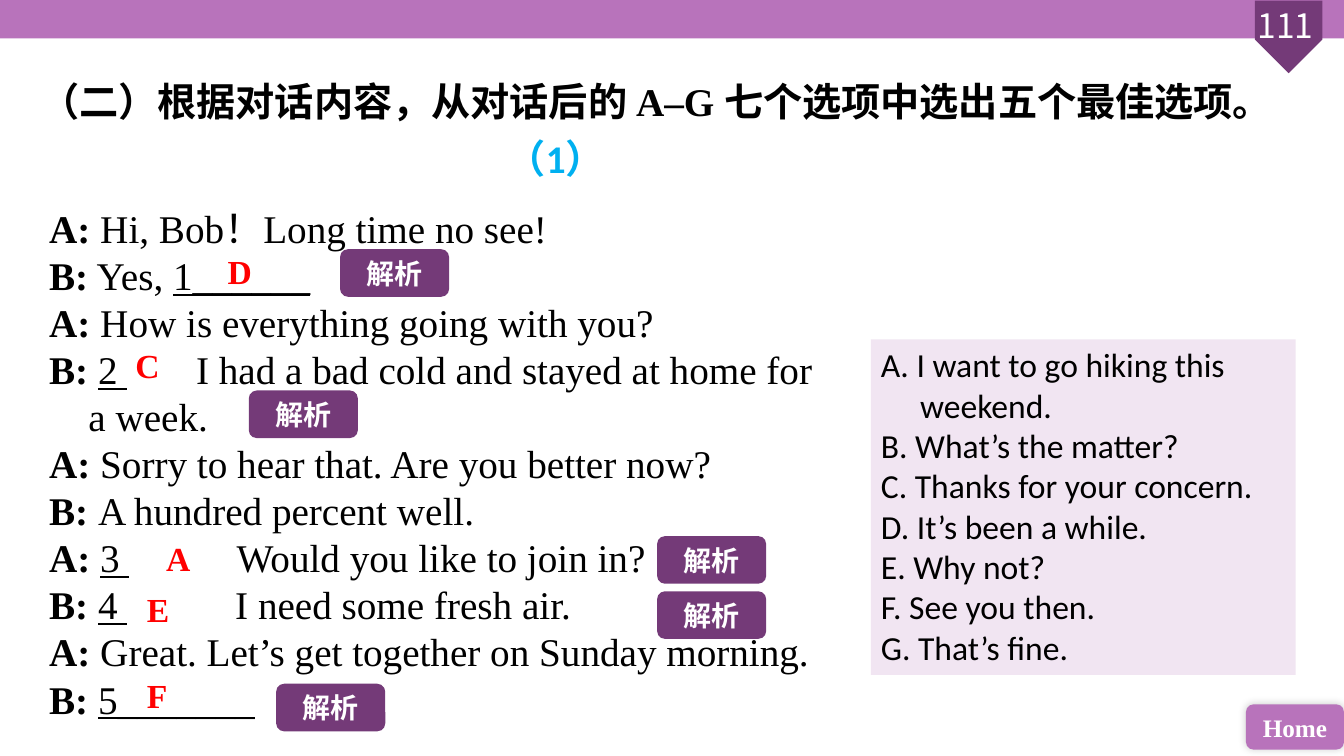
from lxml import etree
from pptx import Presentation
from pptx.dml.color import RGBColor
from pptx.enum.shapes import MSO_SHAPE
from pptx.enum.text import MSO_ANCHOR, PP_ALIGN
from pptx.oxml.ns import qn
from pptx.util import Cm, Pt

RECTANGLE = MSO_SHAPE.RECTANGLE
ROUNDED = MSO_SHAPE.ROUNDED_RECTANGLE
PENTAGON = MSO_SHAPE.PENTAGON
TOP, MIDDLE = MSO_ANCHOR.TOP, MSO_ANCHOR.MIDDLE
LEFT, CENTER = PP_ALIGN.LEFT, PP_ALIGN.CENTER

ORCHID = RGBColor(0xB8, 0x73, 0xBB)
PLUM = RGBColor(0x74, 0x3A, 0x78)
PALE = RGBColor(0xF1, 0xE5, 0xF2)
WHITE = RGBColor(0xFF, 0xFF, 0xFF)
BLACK = RGBColor(0, 0, 0)
RED = RGBColor(0xFF, 0, 0)
BLUE = RGBColor(0, 0xB0, 0xF0)

SERIF, SANS, CHINESE = "Times New Roman", "Calibri", "Noto Sans CJK SC"
HANGING = 0.99

TITLE_FORMAT = {"name": SERIF, "size": Pt(28), "bold": True, "color": BLACK}
NUMBER_FORMAT = {"name": SANS, "size": Pt(28), "bold": True, "color": BLUE}
PAGE_FORMAT = {"name": CHINESE, "size": Pt(24), "color": WHITE}
HOME_FORMAT = {"name": SERIF, "size": Pt(18), "bold": True, "color": WHITE}
BUTTON_FORMAT = {"name": SANS, "size": Pt(20), "bold": True, "color": WHITE}
ANSWER_FORMAT = {"name": SERIF, "size": Pt(24), "bold": True, "color": RED}
OPTION_FORMAT = {"name": SANS, "size": Pt(24), "color": BLACK}
SPEECH_FORMAT = {"name": SERIF, "size": Pt(28), "color": BLACK}
SPEAKER_FORMAT = SPEECH_FORMAT | {"bold": True}
BLANK_FORMAT = SPEECH_FORMAT | {"underline": True}
SHORT_BLANK = BLANK_FORMAT | {"spacing": Pt(42)}
LONG_BLANK = BLANK_FORMAT | {"spacing": Pt(70)}

DIALOGUE = [
    [("A:", SPEAKER_FORMAT), (" Hi, Bob！Long time no see!", SPEECH_FORMAT)],
    [("B:", SPEAKER_FORMAT), (" Yes, ", SPEECH_FORMAT), ("1______", BLANK_FORMAT)],
    [("A:", SPEAKER_FORMAT), (" How is everything going with you?", SPEECH_FORMAT)],
    [("B: ", SPEAKER_FORMAT), ("2", BLANK_FORMAT), (" ", SHORT_BLANK),
     (" I had a bad cold and stayed at home for a week.", SPEECH_FORMAT)],
    [("A: ", SPEAKER_FORMAT), ("Sorry to hear that. Are you better now?", SPEECH_FORMAT)],
    [("B: ", SPEAKER_FORMAT), ("A hundred percent well.", SPEECH_FORMAT)],
    [("A: ", SPEAKER_FORMAT), ("3", BLANK_FORMAT), (" ", LONG_BLANK),
     (" Would you like to join in?", SPEECH_FORMAT)],
    [("B: ", SPEAKER_FORMAT), ("4", BLANK_FORMAT), (" ", LONG_BLANK),
     (" I need some fresh air.", SPEECH_FORMAT)],
    [("A: ", SPEAKER_FORMAT),
     ("Great. Let’s get together on Sunday morning.", SPEECH_FORMAT)],
    [("B: ", SPEAKER_FORMAT), ("5_______", BLANK_FORMAT)],
]
ANSWERS = [("D", 4.5, 1.18), ("C", 2.17, 3.54), ("A", 2.95, 8.42),
           ("E", 2.46, 9.69), ("F", 2.46, 11.87)]
BUTTONS = [(7.58, 1.26), (5.28, 4.82), (15.57, 8.49), (15.57, 9.88), (5.97, 12.21)]
OPTIONS = [
    "A. I want to go hiking this weekend.",
    "B. What’s the matter?",
    "C. Thanks for your concern.",
    "D. It’s been a while.",
    "E. Why not?",
    "F. See you then.",
    "G. That’s fine.",
]


def add_run(paragraph, text, formats):
    run = paragraph.add_run()
    run.text = text
    for name, value in formats.items():
        if name == "color":
            run.font.color.rgb = value
        elif name == "spacing":
            run.font._element.set("spc", str(int(value.pt * 100)))
        else:
            setattr(run.font, name, value)
    etree.SubElement(run.font._element, qn("a:ea"), typeface=CHINESE)


def write(shape, paragraphs, align=LEFT, anchor=TOP, hanging=0, spacing=None):
    frame = shape.text_frame
    frame.word_wrap = True
    frame.vertical_anchor = anchor
    for index, runs in enumerate(paragraphs):
        paragraph = frame.add_paragraph() if index else frame.paragraphs[0]
        paragraph.alignment = align
        paragraph.line_spacing = spacing
        if hanging:
            properties = paragraph._p.get_or_add_pPr()
            properties.set("marL", str(Cm(hanging)))
            properties.set("indent", str(-Cm(hanging)))
        for text, formats in runs:
            add_run(paragraph, text, formats)


def add_block(slide, kind, box, fill):
    shape = slide.shapes.add_shape(kind, *map(Cm, box))
    shape.shadow.inherit = False
    shape.fill.solid()
    shape.fill.fore_color.rgb = fill
    shape.line.fill.background()
    return shape


def add_label(slide, box, text, formats, **layout):
    label = slide.shapes.add_textbox(*map(Cm, box))
    write(label, [[(text, formats)]], **layout)


def add_header(slide, left, top, width, height):
    add_block(slide, RECTANGLE, (left, top, width, height), ORCHID)
    marker = add_block(slide, PENTAGON, (left + width - 2.31, top + 0.08, 1.83, 1.7), PLUM)
    marker.rotation = 90
    add_label(slide, (left + width - 2.72, top, 2.49, 1.27), "111", PAGE_FORMAT, align=CENTER)


def add_home(slide, *box):
    home = add_block(slide, ROUNDED, box, ORCHID)
    effects = home._element.spPr.find(qn("a:effectLst"))
    shadow = etree.SubElement(effects, qn("a:outerShdw"), blurRad=str(Pt(6)),
                              dist="0", dir="18900000", rotWithShape="0")
    color = etree.SubElement(shadow, qn("a:srgbClr"), val="000000")
    etree.SubElement(color, qn("a:alpha"), val="20000")
    write(home, [[("Home", HOME_FORMAT)]], CENTER, MIDDLE)


def add_title(slide, left, top, width, height):
    add_label(slide, (left, top, width, height),
              "（二）根据对话内容，从对话后的 A–G 七个选项中选出五个最佳选项。",
              TITLE_FORMAT, spacing=1.2)
    add_label(slide, (left + 11.76, top + height, 7.39, 1.45), "（1）", NUMBER_FORMAT)


def add_dialogue(slide, left, top, width, height):
    speech = slide.shapes.add_textbox(*map(Cm, (left, top, width, height)))
    write(speech, DIALOGUE, hanging=HANGING)
    for letter, across, down in ANSWERS:
        add_label(slide, (left + across, top + down, 1.24, 1.27), letter, ANSWER_FORMAT)
    for across, down in BUTTONS:
        button = add_block(slide, ROUNDED, (left + across, top + down, 2.75, 1.2), PLUM)
        write(button, [[("解析", BUTTON_FORMAT)]], CENTER, MIDDLE)


def add_options(slide, *box):
    panel = add_block(slide, RECTANGLE, box, PALE)
    write(panel, [[(option, OPTION_FORMAT)] for option in OPTIONS], hanging=HANGING)


def main():
    presentation = Presentation()
    presentation.slide_width = Cm(33.87)
    presentation.slide_height = Cm(19.05)
    slide = presentation.slides.add_slide(presentation.slide_layouts[6])
    add_header(slide, 0, 0, 33.87, 0.97)
    add_home(slide, 31.4, 17.75, 2.47, 1.14)
    add_title(slide, 0.76, 1.59, 30.86, 1.68)
    add_dialogue(slide, 0.99, 5.02, 19.89, 13.41)
    add_options(slide, 21.95, 8.55, 10.7, 8.46)
    presentation.save("out.pptx")


if __name__ == "__main__":
    main()
